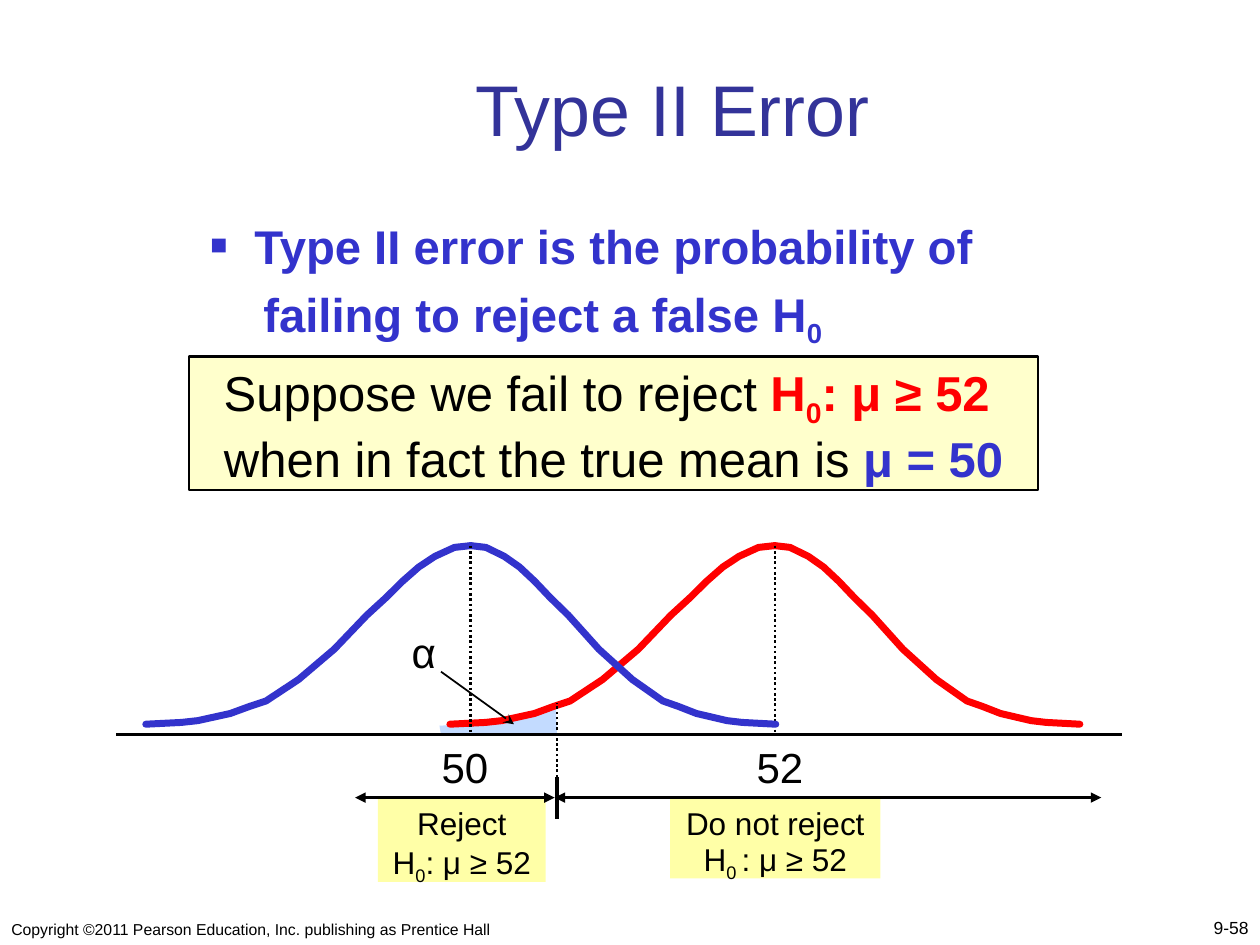
from dataclasses import dataclass
from typing import NamedTuple

from lxml.etree import SubElement
from pptx import Presentation
from pptx.dml.color import RGBColor
from pptx.enum.dml import MSO_LINE
from pptx.enum.shapes import MSO_CONNECTOR, MSO_SHAPE
from pptx.enum.text import MSO_ANCHOR, PP_ALIGN
from pptx.oxml.ns import qn
from pptx.util import Cm, Pt


@dataclass(frozen=True)
class Theme:
    font: str = "Arial"
    black: str = "000000"
    title: str = "333399"
    blue: str = "3333CC"
    red: str = "FF0000"
    box: str = "FFFFCC"
    region: str = "FFFFA7"
    tail: str = "C3DBFF"
    title_pt: float = 41
    body_pt: float = 27
    box_pt: float = 28
    label_pt: float = 24
    region_pt: float = 18
    page_pt: float = 10
    footer_pt: float = 9


class Run(NamedTuple):
    text: str
    color: str = "000000"
    bold: bool = False
    sub: bool = False


class Rect(NamedTuple):
    x: float
    y: float
    w: float
    h: float


class Curve(NamedTuple):
    center: float
    color: str


class Rule(NamedTuple):
    x1: float
    y1: float
    x2: float
    y2: float
    width: float
    dotted: bool = False
    head: str = ""
    tail: str = ""


T = Theme()
AXIS_Y, BASE_Y, PEAK_Y, ARROW_Y = 14.81, 14.6, 11.0, 16.08
CUT_X, ARROW_X = 11.23, 11.18
LEFT_W, RIGHT_W = 6.55, 6.15
BELL = [(0, 0), (0.11, 0.01), (0.16, 0.02), (0.21, 0.04), (0.26, 0.06),
        (0.32, 0.1), (0.37, 0.13), (0.47, 0.25), (0.58, 0.42), (0.68, 0.61),
        (0.74, 0.71), (0.79, 0.8), (0.84, 0.88), (0.89, 0.94), (0.95, 0.99), (1, 1)]
TAIL = [(8.89, AXIS_Y), (8.86, 14.63), (9.88, 14.58), (10.54, 14.4),
        (10.87, 14.35), (11.2, 14.17), (CUT_X, AXIS_Y)]


def rgb(color: str) -> RGBColor:
    return RGBColor.from_string(color)


def fill_text(tf, paras: list[list[Run]], size: float, align=PP_ALIGN.LEFT,
              anchor=MSO_ANCHOR.TOP, gap: float = 0, spacing: list[float] | None = None,
              wrap: bool = True, inset: float = 0.25) -> None:
    tf.word_wrap = wrap
    tf.vertical_anchor = anchor
    tf.margin_left = tf.margin_right = Cm(inset)
    tf.margin_top = tf.margin_bottom = Cm(0.13)
    for i, runs in enumerate(paras):
        p = tf.add_paragraph() if i else tf.paragraphs[0]
        p.alignment = align
        p.space_before = Pt(gap if i else 0)
        if spacing:
            p.line_spacing = spacing[i]
        for run in runs:
            r = p.add_run()
            r.text = run.text
            r.font.name, r.font.size, r.font.bold = T.font, Pt(size), run.bold
            r.font.color.rgb = rgb(run.color)
            if run.sub:
                r._r.get_or_add_rPr().set("baseline", "-25000")


def add_text(s, rect: Rect, paras: list[list[Run]], size: float, **fmt):
    sp = s.shapes.add_textbox(*map(Cm, rect))
    fill_text(sp.text_frame, paras, size, **fmt)
    return sp


def add_box(s, rect: Rect, fill: str, paras: list[list[Run]], size: float,
            border: float = 0, **fmt) -> None:
    sp = s.shapes.add_shape(MSO_SHAPE.RECTANGLE, *map(Cm, rect))
    sp.shadow.inherit = False
    sp.fill.solid()
    sp.fill.fore_color.rgb = rgb(fill)
    if border:
        sp.line.color.rgb, sp.line.width = rgb(T.black), Pt(border)
    else:
        sp.line.fill.background()
    fill_text(sp.text_frame, paras, size, align=PP_ALIGN.CENTER, **fmt)


def add_path(s, pts: list[tuple[float, float]], close: bool):
    first, *rest = [(Cm(x), Cm(y)) for x, y in pts]
    fb = s.shapes.build_freeform(*first)
    fb.add_line_segments(rest, close=close)
    sp = fb.convert_to_shape()
    sp.shadow.inherit = False
    return sp


def add_curve(s, curve: Curve) -> None:
    for width in (-LEFT_W, RIGHT_W):
        pts = [(curve.center + width * (1 - u), BASE_Y - (BASE_Y - PEAK_Y) * v)
               for u, v in BELL]
        sp = add_path(s, pts, close=False)
        sp.fill.background()
        sp.line.color.rgb, sp.line.width = rgb(curve.color), Pt(4)
        ln = sp.line._get_or_add_ln()
        ln.set("cap", "rnd")
        SubElement(ln, qn("a:round"))


def add_rule(s, rule: Rule) -> None:
    c = s.shapes.add_connector(MSO_CONNECTOR.STRAIGHT, *map(Cm, rule[:4]))
    c.line.color.rgb, c.line.width = rgb(T.black), Pt(rule.width)
    if rule.dotted:
        c.line.dash_style = MSO_LINE.ROUND_DOT
    ln = c.line._get_or_add_ln()
    for tag, kind in (("a:headEnd", rule.head), ("a:tailEnd", rule.tail)):
        if kind:
            SubElement(ln, qn(tag), type=kind)
    SubElement(c._element.spPr, qn("a:effectLst"))


def indent(p, margin: float, first: float = 0) -> None:
    pPr = p._p.get_or_add_pPr()
    pPr.set("marL", str(Cm(margin)))
    pPr.set("indent", str(Cm(first)))


def add_bullet(p, char: str, color: str, percent: int) -> None:
    pPr = p._p.get_or_add_pPr()
    SubElement(SubElement(pPr, qn("a:buClr")), qn("a:srgbClr"), val=color)
    SubElement(pPr, qn("a:buSzPct"), val=str(percent * 1000))
    SubElement(pPr, qn("a:buFont"), typeface=T.font)
    SubElement(pPr, qn("a:buChar"), char=char)


def main() -> None:
    prs = Presentation()
    prs.slide_width, prs.slide_height = Cm(25.4), Cm(19.05)
    s = prs.slides.add_slide(prs.slide_layouts[5])

    title = s.shapes.title
    title.left, title.top, title.width, title.height = map(Cm, (2.74, 1.07, 21.64, 2.11))
    fill_text(title.text_frame, [[Run("Type II Error", T.title)]], T.title_pt,
              align=PP_ALIGN.CENTER, anchor=MSO_ANCHOR.BOTTOM)

    add_text(s, Rect(0, 18.21, 12.9, 0.84),
             [[Run("Copyright ©2011 Pearson Education, Inc. publishing as Prentice Hall")]],
             T.footer_pt, anchor=MSO_ANCHOR.BOTTOM, inset=0.23)
    add_text(s, Rect(20.12, 18.19, 5.28, 0.86), [[Run("9-58")]], T.page_pt,
             align=PP_ALIGN.RIGHT, anchor=MSO_ANCHOR.BOTTOM, inset=0.23)

    for rect, verdict, zero, spacing in (
            (Rect(7.62, ARROW_Y, 3.38, 1.7), "Reject", "0", 0.4),
            (Rect(13.51, ARROW_Y, 4.24, 1.63), "Do not reject", "0 ", 0.3)):
        add_box(s, rect, T.region,
                [[Run(verdict)], [Run("H"), Run(zero, sub=True), Run(": μ ≥ 52")]],
                T.region_pt, gap=11, spacing=[1.0, spacing])

    body = add_text(s, Rect(4.01, 4.24, 19.69, 2.74),
                    [[Run("Type II error is the probability of", T.blue, True)],
                     [Run("failing to reject a false H", T.blue, True),
                      Run("0", T.blue, True, True)]],
                    T.body_pt, gap=6.5, inset=0.23)
    lead, follow = body.text_frame.paragraphs
    indent(lead, 0.89, -0.89)
    add_bullet(lead, "■", T.blue, 60)
    indent(follow, 1.07)

    tail = add_path(s, TAIL, close=True)
    tail.fill.solid()
    tail.fill.fore_color.rgb = rgb(T.tail)
    tail.line.fill.background()

    claimed, actual = Curve(15.62, T.red), Curve(9.49, T.blue)
    for curve, x1, x2, arrow_end in ((claimed, 8.43, 22.61, 22.2),
                                     (actual, 2.34, 19.69, 7.16)):
        add_curve(s, curve)
        add_rule(s, Rule(x1, AXIS_Y, x2, AXIS_Y, 2))
        add_rule(s, Rule(curve.center, PEAK_Y, curve.center, AXIS_Y, 1.5, dotted=True))
        add_rule(s, Rule(ARROW_X, ARROW_Y, arrow_end, ARROW_Y, 1.5,
                         head="triangle", tail="triangle"))
    add_rule(s, Rule(CUT_X, 15.67, CUT_X, 16.51, 2.25))
    add_rule(s, Rule(CUT_X, 15.67, CUT_X, 14.17, 1.5, dotted=True))
    add_rule(s, Rule(8.89, 13.54, 10.36, 14.6, 1, tail="stealth"))

    for text, x in (("52", 14.99), ("50", 8.64)):
        add_text(s, Rect(x, AXIS_Y, 1.47, 1.27), [[Run(text)]], T.label_pt,
                 align=PP_ALIGN.CENTER, wrap=False)
    add_text(s, Rect(8.05, 12.5, 1.07, 1.27), [[Run("α")]], T.label_pt, wrap=False)

    add_box(s, Rect(3.81, 7.19, 17.12, 2.69), T.box,
            [[Run("Suppose we fail to reject "), Run("H", T.red, True),
              Run("0", T.red, True, True), Run(": μ ≥ 52 ", T.red, True)],
             [Run("when in fact the true mean is "), Run("μ = 50", T.blue, True)]],
            T.box_pt, border=1.5, gap=7, spacing=[0.9, 0.9])

    prs.save("out.pptx")


if __name__ == "__main__":
    main()
